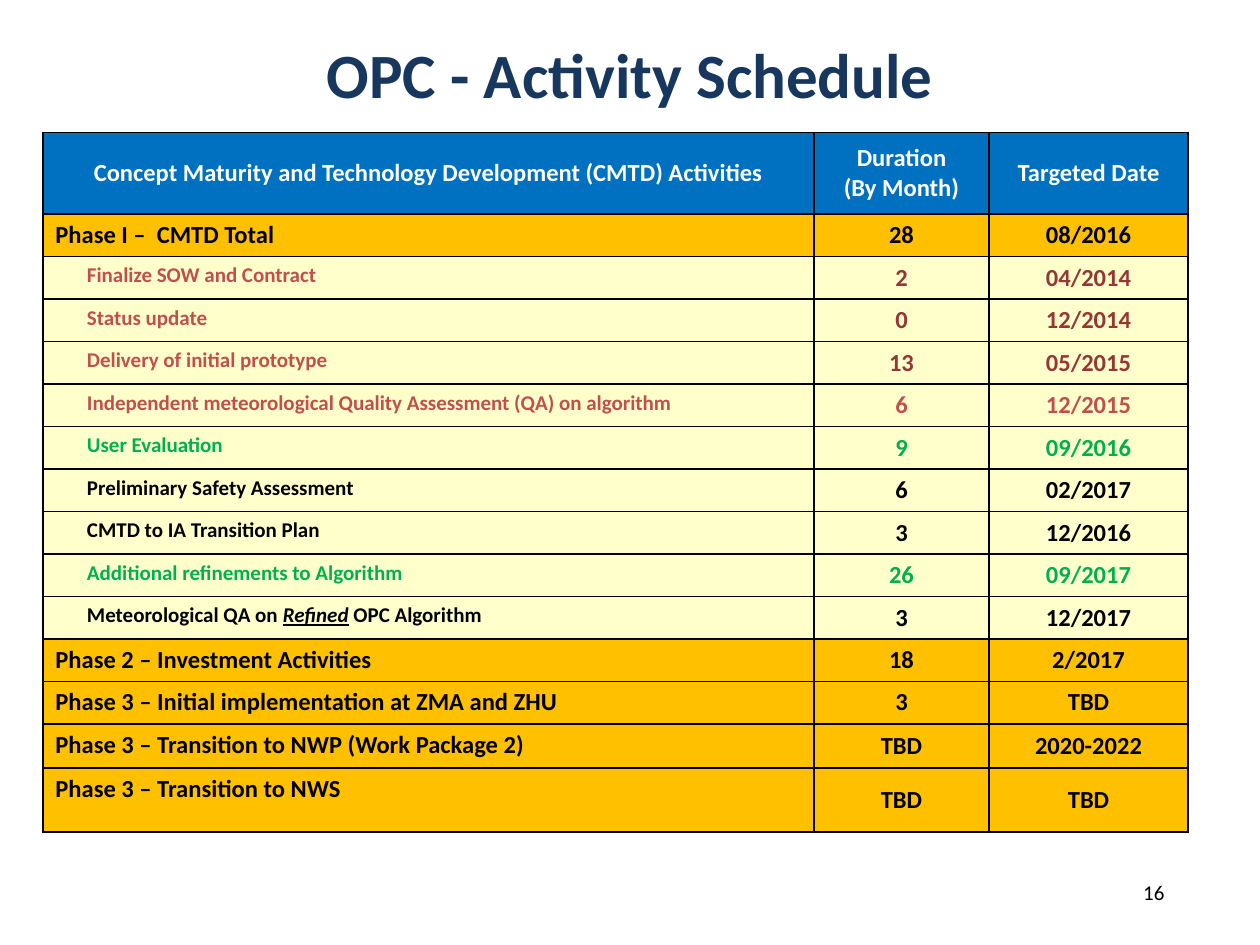
from lxml.etree import SubElement
from pptx import Presentation
from pptx.dml.color import RGBColor
from pptx.enum.text import MSO_ANCHOR, PP_ALIGN
from pptx.oxml import parse_xml
from pptx.oxml.ns import nsdecls, qn
from pptx.util import Inches, Pt

BLACK, WHITE, NAVY = "000000", "FFFFFF", "17375E"
BLUE, GOLD, CREAM = "0070C0", "FFC000", "FFFFCC"
RED, DARK_RED, GREEN = "C0504D", "953735", "00B050"

HEADER = ("Concept Maturity and Technology Development (CMTD) Activities",
          "Duration\n(By Month)", "Targeted Date")
# Kind of row, activity, duration, date, activity colour, value colour
ROWS = [
    ("phase", "Phase I –  CMTD Total", "28", "08/2016", BLACK, BLACK),
    ("task", "Finalize SOW and Contract", "2", "04/2014", RED, DARK_RED),
    ("task", "Status update", "0", "12/2014", RED, DARK_RED),
    ("task", "Delivery of initial prototype", "13", "05/2015", RED, DARK_RED),
    ("task", "Independent meteorological Quality Assessment (QA) on algorithm",
     "6", "12/2015", RED, RED),
    ("task", "User Evaluation", "9", "09/2016", GREEN, GREEN),
    ("task", "Preliminary Safety Assessment", "6", "02/2017", BLACK, BLACK),
    ("task", "CMTD to IA Transition Plan", "3", "12/2016", BLACK, BLACK),
    ("task", "Additional refinements to Algorithm", "26", "09/2017", GREEN, GREEN),
    ("task", "Meteorological QA on *Refined* OPC Algorithm", "3", "12/2017", BLACK, BLACK),
    ("phase", "Phase 2 – Investment Activities", "18", "2/2017", BLACK, BLACK),
    ("phase", "Phase 3 – Initial implementation at ZMA and ZHU", "3", "TBD", BLACK, BLACK),
    ("phase", "Phase 3 – Transition to NWP (Work Package 2)", "TBD", "2020-2022", BLACK, BLACK),
    ("phase", "Phase 3 – Transition to NWS", "TBD", "TBD", BLACK, BLACK),
]
COLUMN_WIDTHS = (6.12, 1.39, 1.58)
ROW_HEIGHTS = [0.65] + [0.33] * 12 + [0.35, 0.51]


def rgb(value):
    return RGBColor.from_string(value)


def write(frame, text, size=14, color=BLACK, bold=True, align=PP_ALIGN.LEFT, indent=0):
    """Fill a frame, one paragraph a line; *starred* words are italic and underlined."""
    for number, line in enumerate(text.split("\n")):
        para = frame.add_paragraph() if number else frame.paragraphs[0]
        para.alignment = align
        if indent:
            para.level = 1
            properties = para._p.get_or_add_pPr()
            properties.set("marL", str(Inches(indent)))
            properties.set("indent", "0")
        for position, part in enumerate(line.split("*")):
            span = para.add_run()
            span.text = part
            span.font.name = "Calibri"
            span.font.size = Pt(size)
            span.font.bold = bold
            span.font.color.rgb = rgb(color)
            if position % 2:
                span.font.italic = span.font.underline = True


def style_cell(cell, fill, anchor):
    cell.fill.solid()
    cell.fill.fore_color.rgb = rgb(fill)
    cell.vertical_anchor = anchor
    properties = cell._tc.get_or_add_tcPr()
    for place, side in enumerate(("lnL", "lnR", "lnT", "lnB")):
        border = parse_xml(f'<a:{side} {nsdecls("a")} w="{Pt(1)}"/>')
        SubElement(SubElement(border, qn("a:solidFill")), qn("a:srgbClr"), val=BLACK)
        properties.insert(place, border)


def add_schedule(slide):
    frame = slide.shapes.add_table(
        len(ROWS) + 1, len(HEADER), Inches(0.34), Inches(1.05),
        Inches(sum(COLUMN_WIDTHS)), Inches(sum(ROW_HEIGHTS)))
    table = frame.table
    for column, width in zip(table.columns, COLUMN_WIDTHS):
        column.width = Inches(width)
    for row, height in zip(table.rows, ROW_HEIGHTS):
        row.height = Inches(height)

    for cell, text in zip(table.rows[0].cells, HEADER):
        style_cell(cell, BLUE, MSO_ANCHOR.MIDDLE)
        write(cell.text_frame, text, color=WHITE, align=PP_ALIGN.CENTER)

    for number, (kind, activity, duration, date, color, value_color) in enumerate(ROWS, 1):
        label, *values = table.rows[number].cells
        is_task = kind == "task"
        fill = CREAM if is_task else GOLD
        style_cell(label, fill, MSO_ANCHOR.TOP)
        write(label.text_frame, activity, size=12 if is_task else 14, color=color,
              indent=0.25 if is_task else 0)
        for cell, text in zip(values, (duration, date)):
            style_cell(cell, fill, MSO_ANCHOR.MIDDLE)
            write(cell.text_frame, text, color=value_color, align=PP_ALIGN.CENTER)


def main():
    deck = Presentation()
    deck.slide_width, deck.slide_height = Inches(10), Inches(7.5)
    slide = deck.slides.add_slide(deck.slide_layouts[5])

    title = slide.shapes.title
    title.left, title.top = Inches(0.5), Inches(0)
    title.width, title.height = Inches(9), Inches(1.17)
    title.text_frame.vertical_anchor = MSO_ANCHOR.MIDDLE
    write(title.text_frame, "OPC - Activity Schedule", size=36, color=NAVY,
          align=PP_ALIGN.CENTER)

    add_schedule(slide)

    page_number = slide.shapes.add_textbox(Inches(7.26), Inches(6.83), Inches(2.08), Inches(0.5))
    page_number.text_frame.word_wrap = True
    page_number.text_frame.vertical_anchor = MSO_ANCHOR.MIDDLE
    write(page_number.text_frame, "16", size=12, bold=False, align=PP_ALIGN.RIGHT)

    deck.save("out.pptx")


if __name__ == "__main__":
    main()
